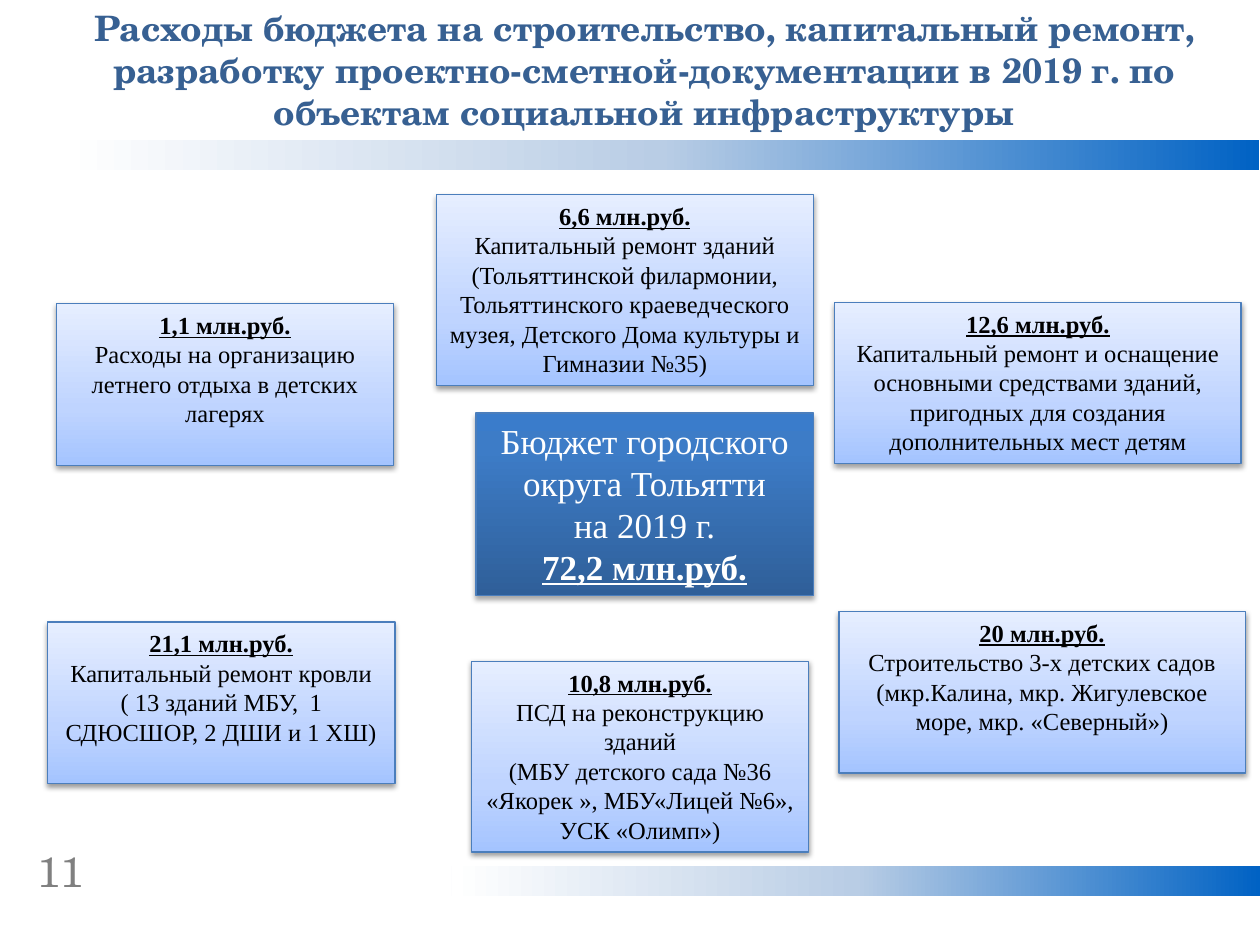
from lxml.etree import SubElement
from pptx import Presentation
from pptx.dml.color import RGBColor
from pptx.enum.shapes import MSO_SHAPE
from pptx.enum.text import MSO_ANCHOR, PP_ALIGN
from pptx.oxml.ns import qn
from pptx.util import Pt

SERIF = "Times New Roman"
SCHOOL = "TeX Gyre Schola"

# Gradient stops: (position in percent, colour)
BAR_STOPS = [(0, "0062C4"), (50, "B9CDE5"), (100, "FFFFFF")]
CARD_STOPS = [(0, "A4C4FF"), (35, "BFD4FF"), (100, "E6EEFF")]
TOTAL_STOPS = [(0, "2F5F99"), (80, "3D7CC7"), (100, "3A7CCB")]

# Left, top, width, height, amount, description paragraphs
CARDS = [
    (27.1, 355.5, 198.6, 92.3, "21,1 млн.руб.",
     ["Капитальный ремонт кровли",
      "( 13 зданий МБУ,\t1 СДЮСШОР, 2 ДШИ и 1 ХШ)"]),
    (249.3, 111.3, 215.6, 109, "6,6 млн.руб.",
     ["Капитальный ремонт зданий",
      "(Тольяттинской филармонии, Тольяттинского краеведческого музея, "
      "Детского Дома культуры и Гимназии №35)"]),
    (479.4, 349.5, 232.2, 92.3, "20 млн.руб.",
     ["Строительство 3-х детских садов (мкр.Калина, мкр. Жигулевское "
      "море, мкр. «Северный»)"]),
    (269.5, 377.9, 192.7, 109, "10,8 млн.руб.",
     ["ПСД на реконструкцию зданий",
      "(МБУ детского сада №36 «Якорек », МБУ«Лицей №6», УСК «Олимп»)"]),
    (32.3, 173.6, 192.7, 92.3, "1,1 млн.руб.",
     ["Расходы на организацию летнего отдыха в детских лагерях"]),
    (477, 172.8, 232.2, 92.3, "12,6 млн.руб.",
     ["Капитальный ремонт и оснащение основными средствами зданий, "
      "пригодных для создания дополнительных мест детям"]),
]


def color(value):
    return RGBColor.from_string(value)


def set_gradient(shape, stops, angle):
    shape.fill.gradient()
    shape.fill.gradient_angle = angle
    stop_list = shape._element.spPr.find(".//" + qn("a:gsLst"))
    for old in list(stop_list):
        stop_list.remove(old)
    for position, value in stops:
        stop = SubElement(stop_list, qn("a:gs"), pos=str(position * 1000))
        SubElement(stop, qn("a:srgbClr"), val=value)


def add_shadow(shape, alpha, distance):
    effects = shape._element.spPr.find(qn("a:effectLst"))
    shadow = SubElement(effects, qn("a:outerShdw"), blurRad=str(Pt(3.1)),
                        dist=str(Pt(distance)), dir="5400000", rotWithShape="0")
    tint = SubElement(shadow, qn("a:srgbClr"), val="000000")
    SubElement(tint, qn("a:alpha"), val=str(alpha * 1000))


def add_panel(slide, place, stops, angle):
    panel = slide.shapes.add_shape(MSO_SHAPE.RECTANGLE, *map(Pt, place))
    panel.shadow.inherit = False
    set_gradient(panel, stops, angle)
    panel.line.fill.background()
    return panel


def write(box, lines, size, font, value, align=PP_ALIGN.CENTER, strong=None):
    """Fill the box; the line with index strong is bold and underlined."""
    frame = box.text_frame
    frame.word_wrap = True
    frame.vertical_anchor = MSO_ANCHOR.TOP
    frame.text = "\n".join(lines)
    for index, para in enumerate(frame.paragraphs):
        para.alignment = align
        for span in para.runs:
            span.font.name = font
            span.font.size = Pt(size)
            span.font.color.rgb = color(value)
            span.font.bold = span.font.underline = index == strong


def add_card(slide, place, stops, lines, size, value, strong, alpha, distance):
    card = add_panel(slide, place, stops, 90)
    card.line.color.rgb = color("4B7EBC")
    card.line.width = Pt(0.75)
    add_shadow(card, alpha, distance)
    write(card, lines, size, SERIF, value, strong=strong)


def add_label(slide, place, text, size, value, align, bold):
    label = slide.shapes.add_textbox(*map(Pt, place))
    write(label, [text], size, SCHOOL, value, align)
    label.text_frame.paragraphs[0].runs[0].font.bold = bold


def main():
    deck = Presentation()
    deck.slide_width, deck.slide_height = Pt(720), Pt(540)
    slide = deck.slides.add_slide(deck.slide_layouts[6])

    # Bars under the title and at the foot
    add_panel(slide, (36, 80, 683.5, 17), BAR_STOPS, 180)
    add_panel(slide, (258, 495, 462, 17), BAR_STOPS, 180)

    # Title and page number
    add_label(slide, (25.2, 0, 686, 80),
              "Расходы бюджета на строительство, капитальный ремонт, "
              "разработку проектно-сметной-документации в 2019 г. по "
              "объектам социальной инфраструктуры",
              20, "376092", PP_ALIGN.CENTER, True)
    add_label(slide, (14.4, 479.5, 56, 36), "11", 24, "808080",
              PP_ALIGN.LEFT, False)

    # Total in the middle, spending items around it
    add_card(slide, (272, 236, 192.7, 104.4), TOTAL_STOPS,
             ["Бюджет городского округа Тольятти", "на 2019 г.",
              "72,2 млн.руб."], 20, "FFFFFF", 2, 35, 1.8)
    for *place, amount, details in CARDS:
        add_card(slide, place, CARD_STOPS, [amount, *details],
                 14, "000000", 0, 38, 1.6)

    deck.save("out.pptx")


if __name__ == "__main__":
    main()
